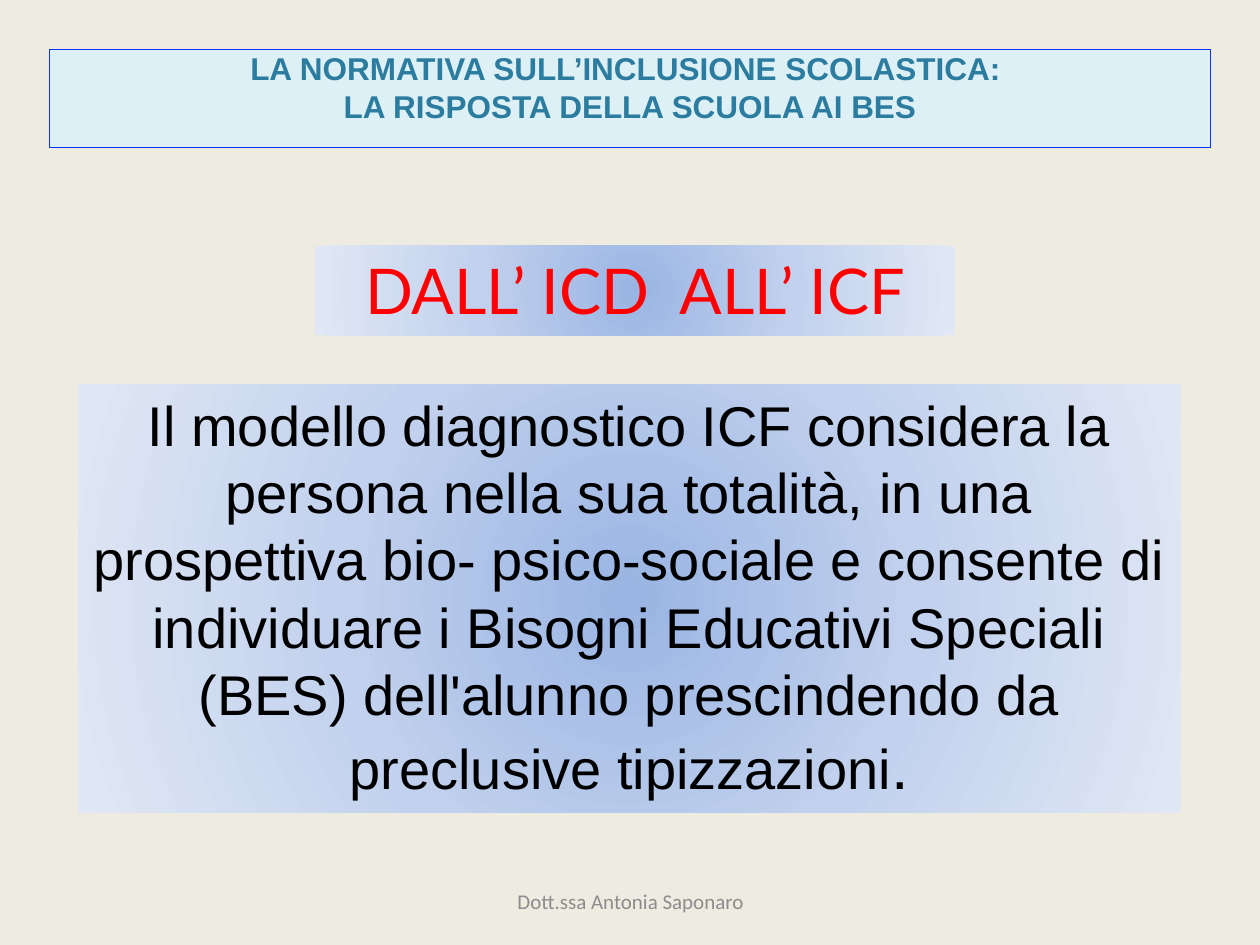
from lxml.etree import SubElement
from pptx import Presentation
from pptx.dml.color import RGBColor
from pptx.enum.shapes import MSO_SHAPE
from pptx.enum.text import MSO_ANCHOR, PP_ALIGN
from pptx.oxml.ns import qn
from pptx.util import Inches, Pt

GLOW = ((0, "9AB5E4"), (50, "C2D1ED"), (100, "E1E8F5"))


def color(hex_code):
    return RGBColor.from_string(hex_code)


def add_span(para, text, size=18, font="Arial", ink="000000", bold=False):
    span = para.add_run()
    span.text = text
    span.font.size = Pt(size)
    span.font.name = font
    span.font.bold = bold
    span.font.color.rgb = color(ink)


def fill_radial(shape, stops):
    """Fill the shape with a circular gradient running out from its centre."""
    shape.fill.solid()
    properties = shape._element.spPr
    solid = properties.find(qn("a:solidFill"))
    gradient = solid.makeelement(qn("a:gradFill"), {"rotWithShape": "1"})
    stop_list = SubElement(gradient, qn("a:gsLst"))
    for percent, hex_code in stops:
        stop = SubElement(stop_list, qn("a:gs"), pos=str(percent * 1000))
        SubElement(stop, qn("a:srgbClr"), val=hex_code)
    circle = SubElement(gradient, qn("a:path"), {"path": "circle"})
    SubElement(circle, qn("a:fillToRect"),
               {side: "50000" for side in ("l", "t", "r", "b")})
    properties.replace(solid, gradient)


class SlideBuilder:
    """Holds the current slide and its shared style."""

    def __init__(self, slide, background):
        self.slide = slide
        slide.background.fill.solid()
        slide.background.fill.fore_color.rgb = color(background)

    def set_text(self, shape, paragraphs, anchor=MSO_ANCHOR.TOP, margin=None):
        """Set centred paragraphs, each a list of (text, format) spans."""
        frame = shape.text_frame
        frame.word_wrap = True
        frame.vertical_anchor = anchor
        if margin is not None:
            frame.margin_left = frame.margin_right = Inches(margin)
            frame.margin_top = frame.margin_bottom = Inches(margin)
        for index, spans in enumerate(paragraphs):
            para = frame.add_paragraph() if index else frame.paragraphs[0]
            para.alignment = PP_ALIGN.CENTER
            for text, style in spans:
                add_span(para, text, **style)

    def rectangle(self, *bounds):
        shape = self.slide.shapes.add_shape(MSO_SHAPE.RECTANGLE, *map(Inches, bounds))
        shape.shadow.inherit = False
        return shape

    def banner(self, bounds, paragraphs, fill, line):
        shape = self.rectangle(*bounds)
        shape.fill.solid()
        shape.fill.fore_color.rgb = color(fill)
        shape.line.color.rgb = color(line)
        shape.line.width = Pt(0.75)
        self.set_text(shape, paragraphs, margin=0)

    def glow_box(self, bounds, paragraphs):
        shape = self.rectangle(*bounds)
        fill_radial(shape, GLOW)
        shape.line.fill.background()
        self.set_text(shape, paragraphs)

    def label(self, bounds, paragraphs):
        box = self.slide.shapes.add_textbox(*map(Inches, bounds))
        self.set_text(box, paragraphs, anchor=MSO_ANCHOR.MIDDLE)


def main():
    deck = Presentation()
    deck.slide_width, deck.slide_height = Inches(10), Inches(7.5)
    page = SlideBuilder(deck.slides.add_slide(deck.slide_layouts[6]), "EEECE1")

    heading = dict(size=18, ink="2C7C9F", bold=True)
    page.banner((0.39, 0.39, 9.22, 0.78),
                [[("LA NORMATIVA SULL’INCLUSIONE SCOLASTICA: ", heading)],
                 [("LA RISPOSTA DELLA SCUOLA AI BES", heading)]],
                fill="DCF0F6", line="0433FF")
    page.glow_box((2.5, 1.95, 5.08, 0.71),
                  [[("DALL’ ICD  ALL’ ICF", dict(size=36, font="Lato", ink="FF0000"))]])
    page.glow_box((0.62, 3.05, 8.75, 3.4),
                  [[("Il modello diagnostico ICF considera la persona nella sua "
                     "totalità, in una prospettiva bio- psico-sociale e consente di "
                     "individuare i Bisogni Educativi Speciali (BES) dell'alunno "
                     "prescindendo da preclusive tipizzazioni", dict(size=32)),
                    (".", dict(size=36))]])
    page.label((3.42, 6.95, 3.17, 0.4),
               [[("Dott.ssa Antonia Saponaro",
                  dict(size=12, font="Calibri", ink="8C8C8C"))]])
    deck.save("out.pptx")


if __name__ == "__main__":
    main()
